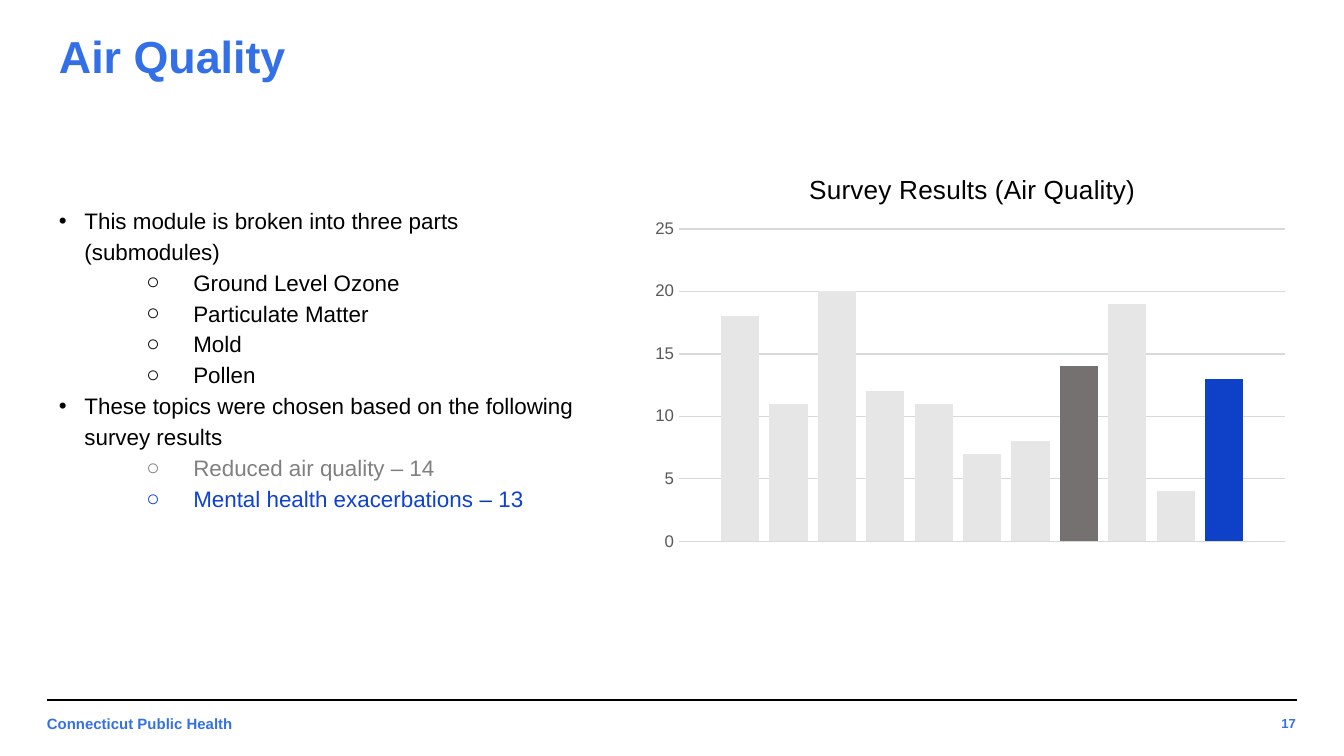
from typing import NamedTuple

from lxml.etree import SubElement
from pptx import Presentation
from pptx.chart.chart import Chart
from pptx.chart.data import CategoryChartData
from pptx.dml.color import RGBColor
from pptx.enum.chart import XL_CHART_TYPE, XL_TICK_MARK
from pptx.enum.shapes import MSO_CONNECTOR
from pptx.enum.text import MSO_ANCHOR, PP_ALIGN
from pptx.oxml import parse_xml
from pptx.oxml.ns import nsdecls, qn
from pptx.slide import Slide
from pptx.text.text import Font, TextFrame, _Paragraph
from pptx.util import Inches, Pt

FONT = "Arial"
BLACK = "000000"
HEADING_BLUE = "3370E8"
FOOTER_BLUE = "3371E7"
ACCENT_BLUE = "0F42D2"
PALE_BAR = "E7E6E6"
SURVEY_VALUES = (18, 11, 20, 12, 11, 7, 8, 14, 19, 4, 13)
HIGHLIGHTED_BARS = {8: "757171", 11: "0E40C8"}


class TextRun(NamedTuple):
    text: str
    color: str = BLACK


class BulletLevel(NamedTuple):
    symbol: str
    margin: float
    hanging: float


class Bullet(NamedTuple):
    level: int
    runs: tuple[TextRun, ...]


class Label(NamedTuple):
    text: str
    box: tuple[float, float, float, float]
    size: float
    color: str
    anchor: MSO_ANCHOR
    alignment: PP_ALIGN


LEVELS = (BulletLevel("•", 0.19, 0.19), BulletLevel("○", 1, 0.35))
BULLETS = (
    Bullet(0, (TextRun("This module is broken into three parts (submodules)"),)),
    Bullet(1, (TextRun("Ground Level Ozone"),)),
    Bullet(1, (TextRun("Particulate Matter"),)),
    Bullet(1, (TextRun("Mold"),)),
    Bullet(1, (TextRun("Pollen"),)),
    Bullet(0, (TextRun("These topics were chosen based on the following survey results"),)),
    Bullet(1, (TextRun("Reduced air quality – 14", "808080"),)),
    Bullet(1, (TextRun("Mental health exacerbations ", ACCENT_BLUE),
               TextRun("– ", "003D9C"), TextRun("13", ACCENT_BLUE))),
)
LABELS = (
    Label("Air Quality", (0.34, 0.25, 9.32, 0.33), 24, HEADING_BLUE,
          MSO_ANCHOR.MIDDLE, PP_ALIGN.LEFT),
    Label("Connecticut Public Health", (0.25, 5.25, 3.28, 0.34), 8, FOOTER_BLUE,
          MSO_ANCHOR.TOP, PP_ALIGN.LEFT),
    Label("17", (9.14, 5.26, 0.6, 0.25), 7, FOOTER_BLUE,
          MSO_ANCHOR.MIDDLE, PP_ALIGN.RIGHT),
)


def rgb(color: str) -> RGBColor:
    return RGBColor.from_string(color)


def style_font(font: Font, size: float, color: str, bold: bool = False) -> None:
    font.name = FONT
    font.size = Pt(size)
    font.bold = bold
    font.color.rgb = rgb(color)


def add_text_frame(slide: Slide, box: tuple[float, float, float, float],
                   anchor: MSO_ANCHOR) -> TextFrame:
    frame = slide.shapes.add_textbox(*map(Inches, box)).text_frame
    frame.word_wrap = True
    frame.vertical_anchor = anchor
    frame.margin_left = frame.margin_right = Inches(0.1)
    frame.margin_top = frame.margin_bottom = Inches(0.1)
    return frame


def add_label(slide: Slide, label: Label) -> None:
    paragraph = add_text_frame(slide, label.box, label.anchor).paragraphs[0]
    paragraph.alignment = label.alignment
    run = paragraph.add_run()
    run.text = label.text
    style_font(run.font, label.size, label.color, bold=True)


def set_bullet(paragraph: _Paragraph, level: BulletLevel) -> None:
    properties = paragraph._p.get_or_add_pPr()
    properties.set("marL", str(Inches(level.margin)))
    properties.set("indent", str(-Inches(level.hanging)))
    SubElement(properties, qn("a:buFont"), typeface=FONT)
    SubElement(properties, qn("a:buChar"), char=level.symbol)


def add_bullets(slide: Slide) -> None:
    frame = add_text_frame(slide, (0.34, 1.41, 4.16, 2.45), MSO_ANCHOR.TOP)
    for index, bullet in enumerate(BULLETS):
        paragraph = frame.add_paragraph() if index else frame.paragraphs[0]
        paragraph.level = bullet.level
        paragraph.line_spacing = 1.15
        set_bullet(paragraph, LEVELS[bullet.level])
        for text_run in bullet.runs:
            run = paragraph.add_run()
            run.text = text_run.text
            style_font(run.font, 12, text_run.color)


def add_footer_line(slide: Slide) -> None:
    line = slide.shapes.add_connector(
        MSO_CONNECTOR.STRAIGHT, Inches(9.65), Inches(5.21), Inches(0.35), Inches(5.21))
    line.line.color.rgb = rgb(BLACK)
    line.line.width = Pt(0.75)
    SubElement(line._element.spPr, qn("a:effectLst"))


def manual_layout(target: str, **fractions: float):
    """Build a chart layout element; fractions are of the chart's own size."""
    inner = '<c:layoutTarget val="inner"/>' if target == "plot" else ""
    values = "".join(f'<c:{key} val="{value}"/>' for key, value in fractions.items())
    return parse_xml(
        f'<c:layout {nsdecls("c")}><c:manualLayout>{inner}'
        f'<c:xMode val="edge"/><c:yMode val="edge"/>{values}'
        "</c:manualLayout></c:layout>")


def place_chart_parts(chart: Chart) -> None:
    plot_area = chart._chartSpace.chart.plotArea
    title = chart.chart_title._element
    for parent in (plot_area, title):
        for layout in parent.findall(qn("c:layout")):
            parent.remove(layout)
    plot_area.insert(0, manual_layout("plot", x=0.06, y=0.19, w=0.92, h=0.77))
    title.find(qn("c:tx")).addnext(manual_layout("title", x=0.25, y=0.04))


def add_survey_chart(slide: Slide) -> None:
    data = CategoryChartData()
    data.categories = ["1"]
    for number, value in enumerate(SURVEY_VALUES, start=1):
        data.add_series(f"Series {number}", [value])
    chart = slide.shapes.add_chart(
        XL_CHART_TYPE.COLUMN_CLUSTERED, Inches(4.76), Inches(1.13),
        Inches(4.9), Inches(3.02), data).chart
    style_font(chart.font, 10, BLACK)
    chart.has_legend = False
    chart.has_title = True
    run = chart.chart_title.text_frame.paragraphs[0].add_run()
    run.text = "Survey Results (Air Quality)"
    style_font(run.font, 14, BLACK)
    chart.chart_title.include_in_layout = False

    plot = chart.plots[0]
    plot.vary_by_categories = False
    plot.gap_width = 219
    plot.overlap = -27
    for number, series in enumerate(plot.series, start=1):
        series.format.fill.solid()
        series.format.fill.fore_color.rgb = rgb(HIGHLIGHTED_BARS.get(number, PALE_BAR))

    chart.category_axis.visible = False
    axis = chart.value_axis
    axis.minimum_scale, axis.maximum_scale, axis.major_unit = 0, 25, 5
    axis.major_tick_mark = axis.minor_tick_mark = XL_TICK_MARK.NONE
    axis.format.line.fill.background()
    axis.major_gridlines.format.line.color.rgb = rgb("D9D9D9")
    axis.major_gridlines.format.line.width = Pt(0.75)
    style_font(axis.tick_labels.font, 9, "595959")
    place_chart_parts(chart)


def main() -> None:
    presentation = Presentation()
    presentation.slide_width = Inches(10)
    presentation.slide_height = Inches(10 * 9 / 16)
    slide = presentation.slides.add_slide(presentation.slide_layouts[6])
    for label in LABELS:
        add_label(slide, label)
    add_footer_line(slide)
    add_bullets(slide)
    add_survey_chart(slide)
    presentation.save("out.pptx")


if __name__ == "__main__":
    main()
